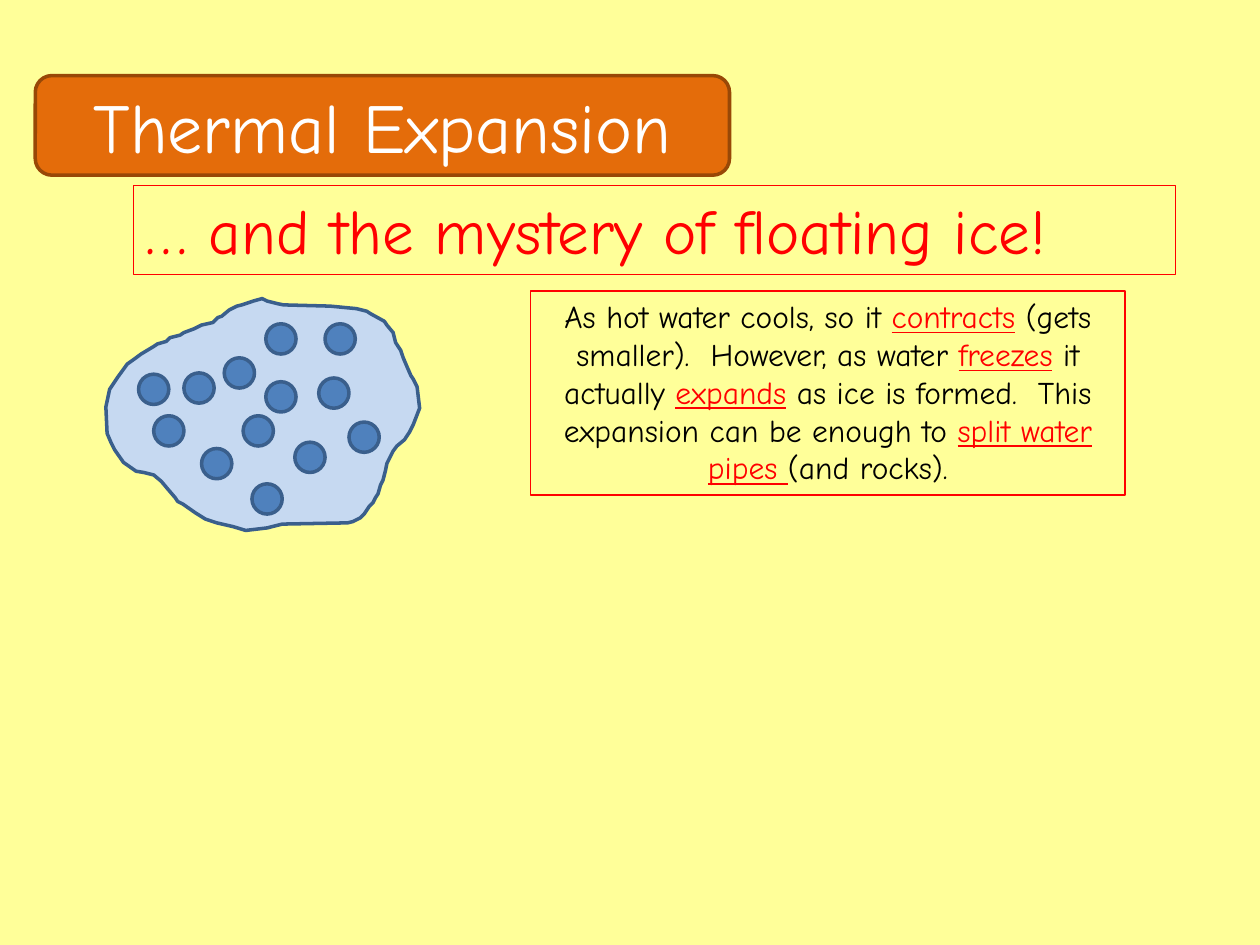
"""Build a slide on thermal expansion and the mystery of floating ice."""
from pptx import Presentation
from pptx.dml.color import RGBColor
from pptx.enum.shapes import MSO_SHAPE
from pptx.enum.text import MSO_ANCHOR, MSO_AUTO_SIZE, PP_ALIGN
from pptx.util import Inches, Pt

ROUNDED, OVAL = MSO_SHAPE.ROUNDED_RECTANGLE, MSO_SHAPE.OVAL
LEFT, CENTER = PP_ALIGN.LEFT, PP_ALIGN.CENTER
MIDDLE = MSO_ANCHOR.MIDDLE
GROW = MSO_AUTO_SIZE.SHAPE_TO_FIT_TEXT

FONT = "Comic Neue"
YELLOW = RGBColor(0xFF, 0xFF, 0x99)
ORANGE = RGBColor(0xE4, 0x6C, 0x0A)
BROWN = RGBColor(0x98, 0x48, 0x07)
RED = RGBColor(0xFF, 0x00, 0x00)
BLACK = RGBColor(0x00, 0x00, 0x00)
WHITE = RGBColor(0xFF, 0xFF, 0xFF)
PALE_BLUE = RGBColor(0xC6, 0xD9, 0xF1)
BLUE = RGBColor(0x4F, 0x81, 0xBD)
DARK_BLUE = RGBColor(0x3A, 0x5F, 0x8C)


def write(shape, text, size, color, align=LEFT, key_color=RED):
    """Write text, underlining every part that stands between bars."""
    paragraph = shape.text_frame.paragraphs[0]
    paragraph.alignment = align
    for index, part in enumerate(text.split("|")):
        is_key = index % 2 == 1
        run = paragraph.add_run()
        run.text = part
        run.font.name = FONT
        run.font.size = Pt(size)
        run.font.color.rgb = key_color if is_key else color
        run.font.underline = is_key


def paint(shape, fill, line):
    """Give a shape a plain fill and a 2 pt outline."""
    shape.shadow.inherit = False
    shape.fill.solid()
    shape.fill.fore_color.rgb = fill
    shape.line.color.rgb = line
    shape.line.width = Pt(2)


prs = Presentation()
prs.slide_width, prs.slide_height = Inches(10), Inches(7.5)
slide = prs.slides.add_slide(prs.slide_layouts[6])
slide.background.fill.solid()
slide.background.fill.fore_color.rgb = YELLOW
shapes = slide.shapes

title = shapes.add_shape(ROUNDED, Inches(0.28), Inches(0.6), Inches(5.51), Inches(0.79))
paint(title, ORANGE, BROWN)
title.text_frame.vertical_anchor = MIDDLE
write(title, "Thermal Expansion", 40, WHITE, align=CENTER)

WATER_OUTLINE = [
    (1.69, 2.56), (1.6, 2.58), (1.54, 2.61), (1.46, 2.64), (1.43, 2.66),
    (1.35, 2.68), (1.32, 2.71), (1.25, 2.73), (1.22, 2.75), (1.12, 2.81),
    (1.08, 2.84), (1.01, 2.89), (0.93, 3), (0.89, 3.06), (0.87, 3.09),
    (0.84, 3.23), (0.85, 3.44), (0.88, 3.51), (0.91, 3.57), (0.98, 3.67),
    (1.08, 3.74), (1.14, 3.75), (1.22, 3.77), (1.28, 3.82), (1.33, 3.88),
    (1.39, 3.95), (1.41, 3.98), (1.45, 4), (1.55, 4.07), (1.63, 4.12),
    (1.72, 4.15), (1.85, 4.18), (1.95, 4.21), (2.12, 4.19), (2.24, 4.16),
    (2.76, 4.15), (2.8, 4.14), (2.86, 4.11), (2.89, 4.08), (2.93, 4.02),
    (2.96, 3.99), (2.98, 3.95), (3, 3.92), (3.02, 3.85), (3.04, 3.81),
    (3.06, 3.73), (3.07, 3.68), (3.12, 3.58), (3.15, 3.54), (3.21, 3.49),
    (3.25, 3.43), (3.28, 3.37), (3.33, 3.24), (3.31, 3.07), (3.28, 3.01),
    (3.26, 2.98), (3.23, 2.91), (3.2, 2.84), (3.18, 2.78), (3.14, 2.72),
    (3.12, 2.64), (3.07, 2.58), (3.05, 2.55), (2.94, 2.49), (2.91, 2.47),
    (2.83, 2.45), (2.62, 2.43), (2.25, 2.42), (2.2, 2.41), (2.12, 2.39),
    (2.08, 2.37), (2.01, 2.39), (1.92, 2.42), (1.88, 2.43), (1.82, 2.46),
    (1.76, 2.51), (1.73, 2.52),
]
outline = [(Inches(x), Inches(y)) for x, y in WATER_OUTLINE]
builder = shapes.build_freeform(*outline[0])
builder.add_line_segments(outline[1:], close=True)
paint(builder.convert_to_shape(), PALE_BLUE, DARK_BLUE)

MOLECULES = [
    (1.46, 2.96), (1.78, 2.84), (1.22, 3.3), (1.6, 3.56), (1.93, 3.3),
    (2, 3.84), (2.11, 2.57), (2.11, 3.03), (2.34, 3.51), (2.77, 3.35),
    (1.1, 2.97), (2.53, 3), (2.58, 2.57),
]
diameter = Inches(0.24)
for x, y in MOLECULES:
    molecule = shapes.add_shape(OVAL, Inches(x), Inches(y), diameter, diameter)
    paint(molecule, BLUE, DARK_BLUE)

EXPLANATION = (
    "As hot water cools, so it |contracts| (gets smaller).  However, as water "
    "|freezes| it actually |expands| as ice is formed.  This expansion can be "
    "enough to |split water pipes |(and rocks)."
)
PASSAGES = [
    ((1.06, 1.47, 8.27, 0.71), "… and the mystery of floating ice!", 36, RED, LEFT),
    ((4.21, 2.31, 4.72, 1.62), EXPLANATION, 18, BLACK, CENTER),
]
for place, text, size, color, align in PASSAGES:
    passage = shapes.add_textbox(*map(Inches, place))
    passage.line.color.rgb = RED
    passage.line.width = Pt(0.75)
    passage.text_frame.word_wrap = True
    passage.text_frame.auto_size = GROW
    write(passage, text, size, color, align=align)

prs.save("out.pptx")
